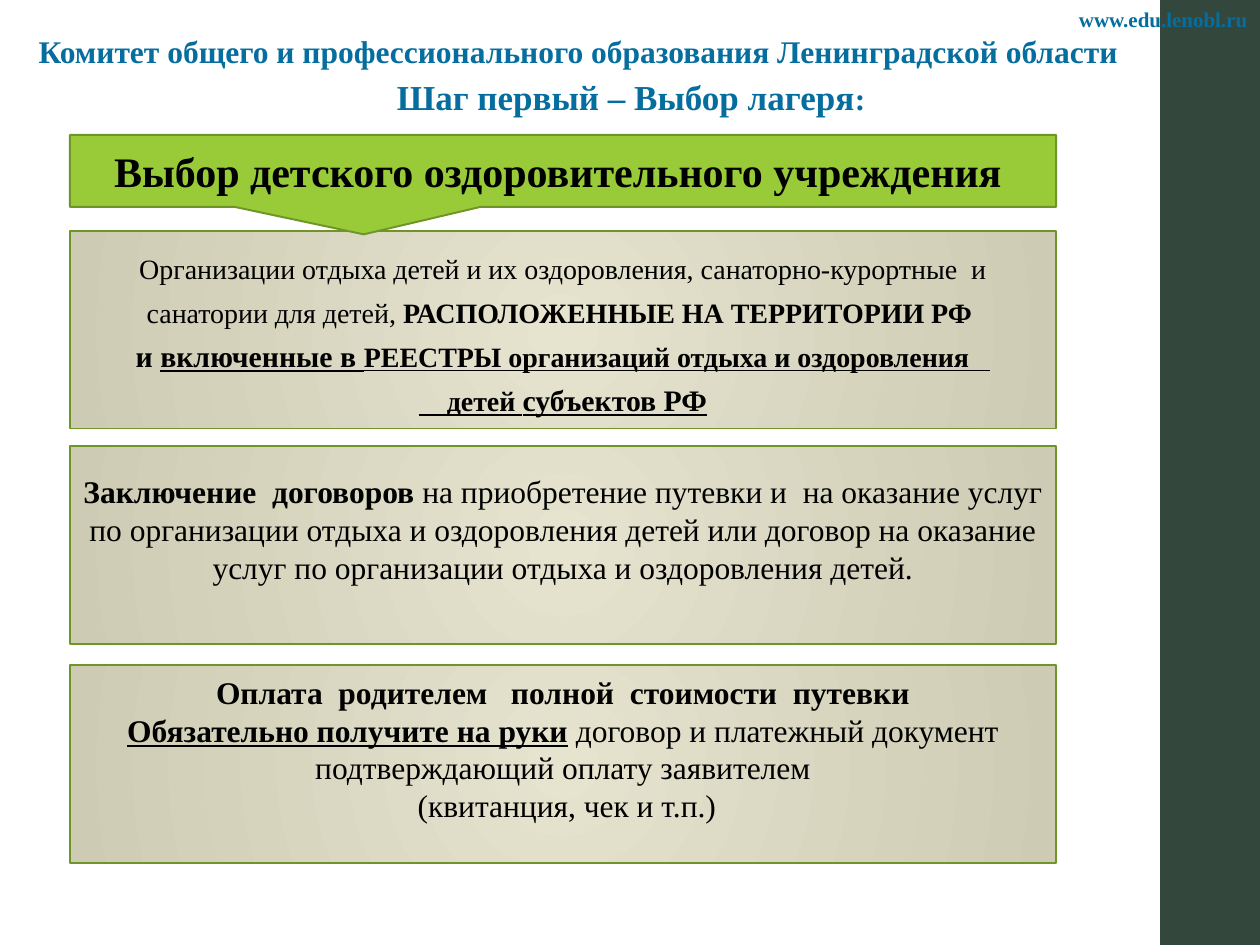
from dataclasses import dataclass

from lxml import etree
from pptx import Presentation
from pptx import util as u
from pptx.dml.color import RGBColor
from pptx.enum import shapes, text
from pptx.oxml.ns import qn


@dataclass(frozen=True)
class Theme:
    font: str = "Times New Roman"
    ink: str = "000000"
    heading: str = "056E9F"
    strip: str = "33473C"
    callout: str = "99CB38"
    border: str = "6F9428"
    panel_center: str = "E6E3CE"
    panel_edge: str = "CDCBB3"
    border_width: float = 1.1
    address: int = 12
    small: int = 16
    medium: int = 17
    body: int = 18
    step: int = 20
    callout_size: int = 24


THEME = Theme()
CENTER = text.PP_ALIGN.CENTER
PANEL_LEFT, PANEL_WIDTH, PANEL_HEIGHT = 1.41, 19.88, 3.99


@dataclass(frozen=True)
class Part:
    wording: str
    size: int = THEME.body
    bold: bool = False
    underline: bool = False


def rgb(value):
    return RGBColor.from_string(value)


def box(left, top, width, height):
    return [u.Cm(length) for length in (left, top, width, height)]


def write(frame, lines, color=THEME.ink, align=CENTER, spacing=None):
    frame.word_wrap = True
    for index, parts in enumerate(lines):
        paragraph = frame.add_paragraph() if index else frame.paragraphs[0]
        paragraph.alignment = align
        if spacing:
            paragraph.line_spacing = spacing[index]
        for part in parts:
            run = paragraph.add_run()
            run.text = part.wording
            run.font.name = THEME.font
            run.font.size = u.Pt(part.size)
            run.font.bold = part.bold
            run.font.underline = part.underline
            run.font.color.rgb = rgb(color)


def add_label(slide, place, parts, align):
    label = slide.shapes.add_textbox(*box(*place))
    write(label.text_frame, [parts], THEME.heading, align)


def add_block(slide, preset, place, fill=None, border=None):
    block = slide.shapes.add_shape(preset, *box(*place))
    block.shadow.inherit = False
    if fill:
        block.fill.solid()
        block.fill.fore_color.rgb = rgb(fill)
    if border:
        block.line.color.rgb = rgb(border)
        block.line.width = u.Pt(THEME.border_width)
    else:
        block.line.fill.background()
    block.text_frame.vertical_anchor = text.MSO_ANCHOR.MIDDLE
    return block


def fill_radially(block):
    block.fill.gradient()
    for stop, color in zip(block.fill.gradient_stops,
                           (THEME.panel_center, THEME.panel_edge)):
        stop.color.rgb = rgb(color)
    first, last = block.fill.gradient_stops
    first.position, last.position = 0, 1
    gradient = block.element.spPr.find(qn("a:gradFill"))
    gradient.remove(gradient.find(qn("a:lin")))
    radial = etree.SubElement(gradient, qn("a:path"), {"path": "circle"})
    etree.SubElement(radial, qn("a:fillToRect"),
                     {side: "50000" for side in "ltrb"})


def add_panel(slide, top, lines, spacing=None, bottom=0.13):
    panel = add_block(slide, shapes.MSO_SHAPE.RECTANGLE,
                      (PANEL_LEFT, top, PANEL_WIDTH, PANEL_HEIGHT),
                      border=THEME.border)
    fill_radially(panel)
    panel.text_frame.margin_bottom = u.Cm(bottom)
    write(panel.text_frame, lines, spacing=spacing)


def add_callout(slide):
    callout = add_block(slide, shapes.MSO_SHAPE.RECTANGULAR_CALLOUT,
                        (PANEL_LEFT, 2.72, PANEL_WIDTH, 1.45),
                        THEME.callout, THEME.border)
    callout.adjustments[0] = -0.202
    callout.adjustments[1] = 0.883
    write(callout.text_frame, [[
        Part("Выбор детского оздоровительного учреждения ",
             THEME.callout_size, True)]])


def main():
    deck = Presentation()
    deck.slide_width, deck.slide_height = u.Cm(25.4), u.Cm(19.05)
    slide = deck.slides.add_slide(deck.slide_layouts[6])

    add_block(slide, shapes.MSO_SHAPE.RECTANGLE,
              (23.39, 0, 2.03, 19.05), THEME.strip)
    add_panel(slide, 4.65, [
        [Part("Организации отдыха детей и их оздоровления, "
              "санаторно-курортные  и санатории для детей, ", THEME.small),
         Part("РАСПОЛОЖЕННЫЕ НА ТЕРРИТОРИИ РФ ", THEME.small, True)],
        [Part("и ", THEME.medium, True),
         Part("включенные в ", THEME.medium, True, True),
         Part("РЕЕСТРЫ организаций отдыха и оздоровления   ",
              THEME.small, True, True)],
        [Part("    детей ", THEME.small, True, True),
         Part("субъектов РФ", THEME.medium, True, True)],
    ], spacing=(1.31, 1.24, 1.24))

    add_label(slide, (7.75, 1.4, 10.67, 1.19),
              [Part("Шаг первый – Выбор лагеря", THEME.step, True),
               Part(":", THEME.body, True)], text.PP_ALIGN.LEFT)
    add_label(slide, (-0.89, 0.53, 25.1, 1.02),
              [Part("Комитет общего и профессионального образования "
                    "Ленинградской области", THEME.body, True)], CENTER)
    add_label(slide, (19.81, 0, 5.59, 0.76),
              [Part("www.edu.lenobl.ru", THEME.address, True)],
              text.PP_ALIGN.RIGHT)
    add_callout(slide)

    add_panel(slide, 8.99, [
        [Part("Заключение  договоров ", bold=True),
         Part("на приобретение путевки и  на оказание услуг по организации "
              "отдыха и оздоровления детей или договор на оказание услуг "
              "по организации отдыха и оздоровления детей.")],
    ], bottom=0.76)
    add_panel(slide, 13.41, [
        [Part("Оплата  родителем   полной  стоимости  путевки", bold=True)],
        [Part("Обязательно получите на руки", bold=True, underline=True),
         Part(" договор и платежный документ подтверждающий "
              "оплату заявителем")],
        [Part(" (квитанция, чек и т.п.)")],
    ], bottom=0.76)

    deck.save("out.pptx")


if __name__ == "__main__":
    main()
